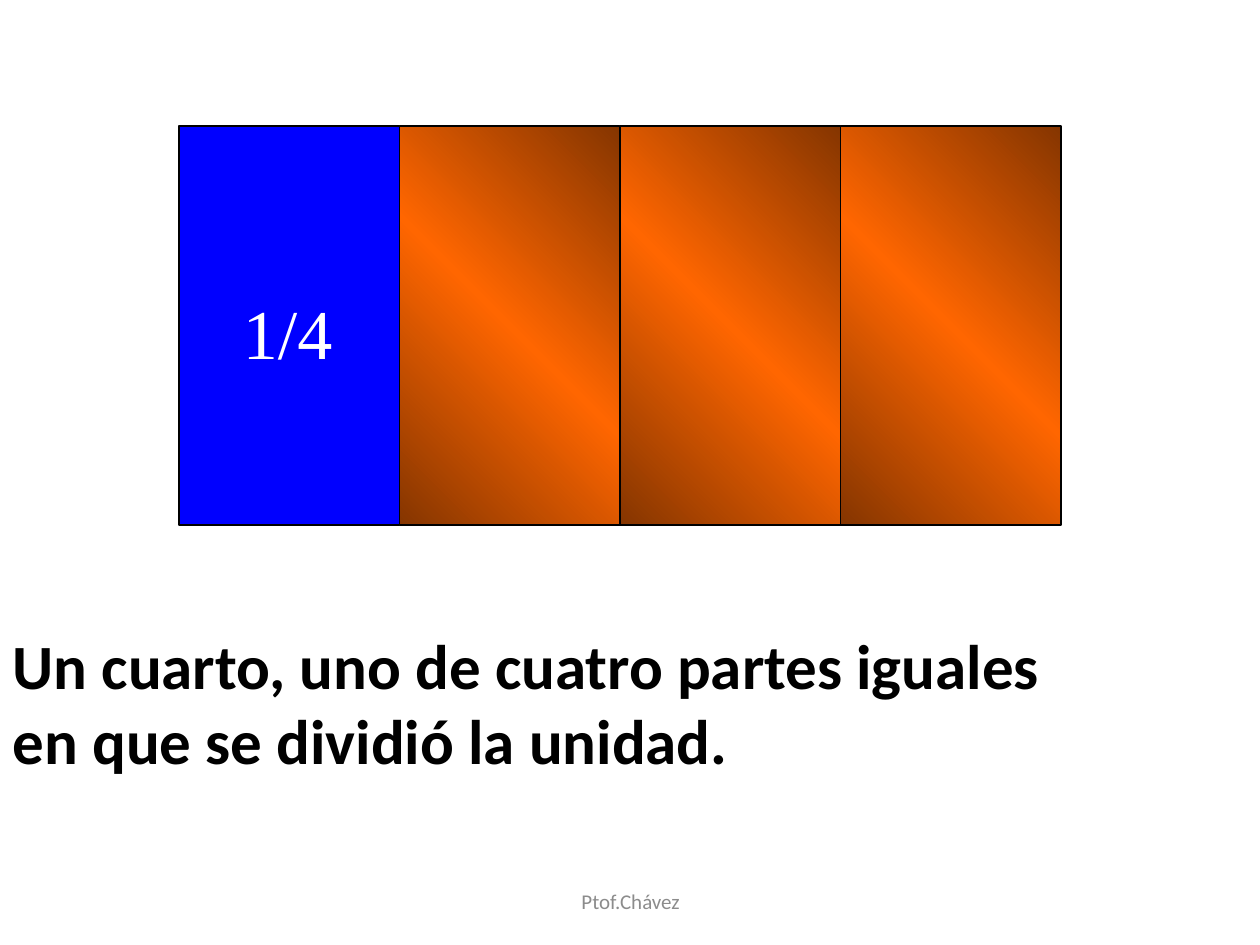
from copy import deepcopy
from pptx import Presentation
from pptx.dml.color import RGBColor
from pptx.enum.shapes import MSO_SHAPE
from pptx.enum.text import MSO_ANCHOR, MSO_AUTO_SIZE, PP_ALIGN
from pptx.util import Inches, Pt

BLUE = RGBColor(0x00, 0x00, 0xFF)
ORANGE = RGBColor(0xFF, 0x66, 0x00)
BROWN = RGBColor(0x85, 0x35, 0x00)
BLACK = RGBColor(0x00, 0x00, 0x00)
WHITE = RGBColor(0xFF, 0xFF, 0xFF)
GREY = RGBColor(0x8C, 0x8C, 0x8C)


def fill_orange_gradient(fill):
    fill.gradient()
    fill.gradient_angle = 45
    first_stop = fill.gradient_stops[0]._gs
    first_stop.addnext(deepcopy(first_stop))
    for stop, position, color in zip(fill.gradient_stops, (0, 0.5, 1), (BROWN, ORANGE, BROWN)):
        stop.position = position
        stop.color.rgb = color


def write_text(box, lines, anchor, alignment, color, font_format):
    frame = box.text_frame
    frame.text = "\n".join(lines)
    frame.word_wrap = True
    frame.auto_size = MSO_AUTO_SIZE.NONE
    frame.vertical_anchor = anchor
    for paragraph in frame.paragraphs:
        paragraph.alignment = alignment
        for span in paragraph.runs:
            span.font.color.rgb = color
            for name, value in font_format.items():
                setattr(span.font, name, value)


deck = Presentation()
deck.slide_width, deck.slide_height = Inches(10), Inches(7.5)
page = deck.slides.add_slide(deck.slide_layouts[5])

part_width = 1.75
for index in range(4):
    part = page.shapes.add_shape(
        MSO_SHAPE.RECTANGLE, Inches(1.42 + index * part_width), Inches(1),
        Inches(part_width), Inches(3.17))
    part.shadow.inherit = False
    part.line.color.rgb = BLACK
    part.line.width = Pt(1)
    if index == 0:
        part.fill.solid()
        part.fill.fore_color.rgb = BLUE
    else:
        fill_orange_gradient(part.fill)

fraction = page.shapes.add_textbox(Inches(1.83), Inches(2.25), Inches(1.08), Inches(0.77))
write_text(fraction, ["1/4"], MSO_ANCHOR.TOP, PP_ALIGN.LEFT, WHITE,
           {"name": "Times New Roman", "size": Pt(40)})

title = page.shapes.title
title.left, title.top, title.width, title.height = Inches(0), Inches(4.92), Inches(10), Inches(1.3)
write_text(title, ["Un cuarto, uno de cuatro partes iguales", "en que se dividió la unidad."],
           MSO_ANCHOR.TOP, PP_ALIGN.LEFT, BLACK,
           {"name": "Calibri", "size": Pt(36), "bold": True})

footer = page.shapes.add_textbox(Inches(3.42), Inches(6.95), Inches(3.17), Inches(0.4))
write_text(footer, ["Ptof.Chávez"], MSO_ANCHOR.MIDDLE, PP_ALIGN.CENTER, GREY,
           {"name": "Calibri", "size": Pt(12)})

deck.save("out.pptx")
